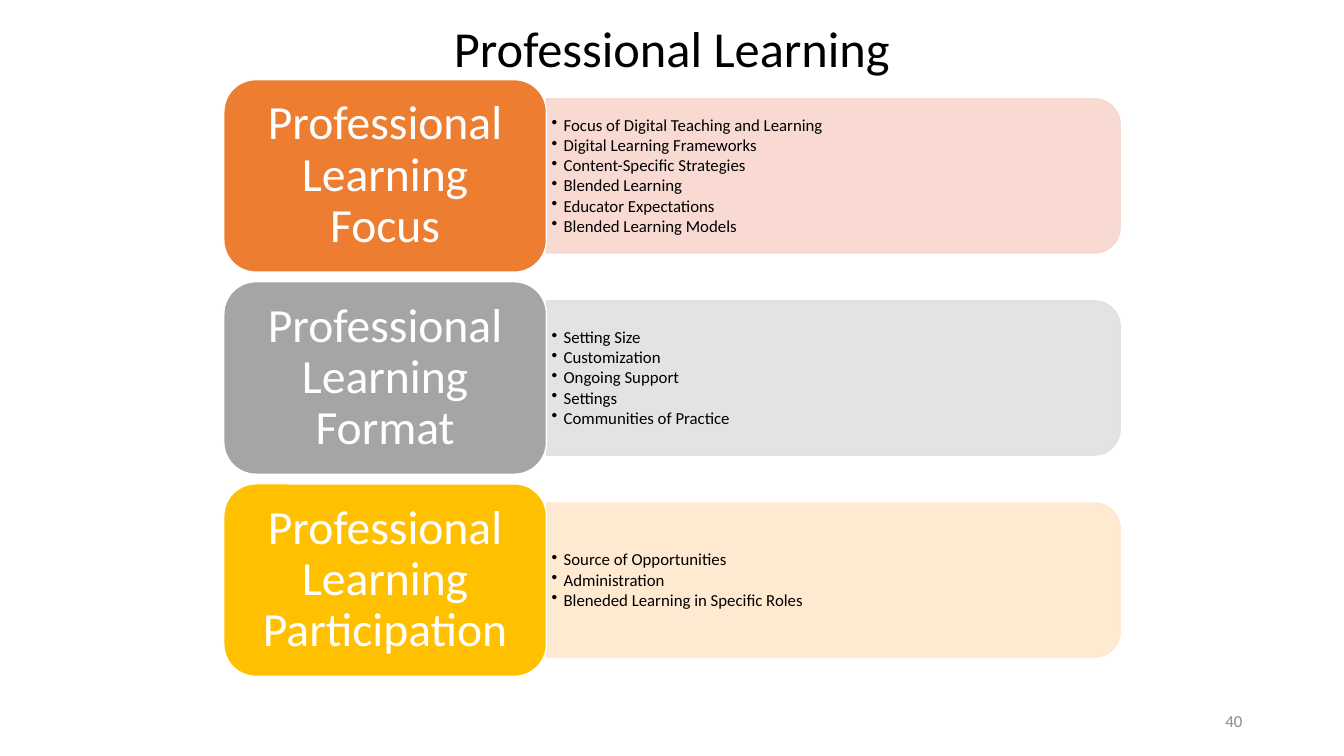
from lxml.etree import SubElement
from pptx import Presentation
from pptx.dml.color import RGBColor
from pptx.enum.shapes import MSO_SHAPE
from pptx.enum.text import MSO_ANCHOR, PP_ALIGN
from pptx.oxml.ns import qn
from pptx.util import Emu, Pt

PX = 9144
FONT = "Calibri"
COLORS = {
    "black": "000000", "white": "FFFFFF", "number": "8C8C8C",
    "orange": "ED7D31", "orange_pale": "F8D7CE",
    "gray": "A5A5A5", "gray_pale": "E1E1E1",
    "gold": "FFC000", "gold_pale": "FFE8CC",
}
TOPICS = [
    ("Professional Learning Focus", "orange",
     ["Focus of Digital Teaching and Learning", "Digital Learning Frameworks",
      "Content-Specific Strategies", "Blended Learning",
      "Educator Expectations", "Blended Learning Models"]),
    ("Professional Learning Format", "gray",
     ["Setting Size", "Customization", "Ongoing Support", "Settings",
      "Communities of Practice"]),
    ("Professional Learning Participation", "gold",
     ["Source of Opportunities", "Administration",
      "Bleneded Learning in Specific Roles"]),
]


def px(*lengths):
    """Turn lengths in px into EMU."""
    return [Emu(round(n * PX)) for n in lengths]


def rgb(name):
    """Look up a named colour."""
    return RGBColor.from_string(COLORS[name])


def set_frame(sp, anchor, inset_x, inset_y):
    """Wrap the text of a shape and set its anchor and insets."""
    tf = sp.text_frame
    tf.word_wrap = True
    tf.vertical_anchor = anchor
    tf.margin_left, tf.margin_right, tf.margin_top, tf.margin_bottom = px(
        inset_x, inset_x, inset_y, inset_y)
    return tf


def style(p, size, color, align):
    """Align a paragraph and format its runs."""
    p.alignment = align
    for r in p.runs:
        r.font.size = Pt(size)
        r.font.name = FONT
        r.font.color.rgb = rgb(color)


def add_line(s, box, text, size, color, align, anchor):
    """Add a text box with a single paragraph."""
    tf = set_frame(s.shapes.add_textbox(*px(*box)), anchor, 10, 5)
    tf.text = text
    style(tf.paragraphs[0], size, color, align)


def add_block(s, kind, box, fill, line):
    """Add a filled preset shape with a thin outline."""
    sp = s.shapes.add_shape(kind, *px(*box))
    sp.shadow.inherit = False
    sp.fill.solid()
    sp.fill.fore_color.rgb = rgb(fill)
    sp.line.color.rgb = rgb(line)
    sp.line.width = Pt(1)
    return sp


def add_panel(s, box, color):
    """Add a pale panel whose right corners are rounded."""
    x, y, w, h = box
    turned = (x + (w - h) / 2, y + (h - w) / 2, h, w)
    sp = add_block(s, MSO_SHAPE.ROUND_2_SAME_RECTANGLE, turned, color, color)
    sp.rotation = 90
    for clr in sp._element.spPr.iter(qn("a:srgbClr")):
        SubElement(clr, qn("a:alpha"), val="90000")


def add_bullets(s, box, items):
    """Add a bulleted list centred vertically in the box."""
    tf = set_frame(s.shapes.add_textbox(*px(*box)), MSO_ANCHOR.MIDDLE, 5, 3)
    tf.text = "\n".join(items)
    for p in tf.paragraphs:
        p.level = 1
        p.line_spacing = 0.9
        p.space_after = Pt(1.5)
        pPr = p._p.get_or_add_pPr()
        pPr.set("marL", str(12 * PX))
        pPr.set("indent", str(-12 * PX))
        SubElement(pPr, qn("a:buChar"), char="•")
        style(p, 12, "black", PP_ALIGN.LEFT)


def add_topic(s, box, label, color, items):
    """Add one row: a pale panel with bullets and a rounded label."""
    x, y, w, h = box
    label_w, panel_h = 320, 153
    panel_x, panel_w = x + label_w, w - label_w
    add_panel(s, (panel_x, y + (h - panel_h) / 2, panel_w, panel_h),
              color + "_pale")
    add_bullets(s, (panel_x, y + 27, panel_w - 8, h - 53), items)
    sp = add_block(s, MSO_SHAPE.ROUNDED_RECTANGLE, (x, y, label_w, h),
                   color, "white")
    tf = set_frame(sp, MSO_ANCHOR.MIDDLE, 14, 7)
    tf.text = label
    p = tf.paragraphs[0]
    p.line_spacing = 0.9
    style(p, 34, "white", PP_ALIGN.CENTER)


def add_topics(s, box, row_h):
    """Spread the topic rows evenly over the box."""
    x, y, w, h = box
    pitch = (h - row_h) / (len(TOPICS) - 1)
    for i, topic in enumerate(TOPICS):
        add_topic(s, (x, y + i * pitch, w, row_h), *topic)


def main():
    """Build the slide and save it."""
    prs = Presentation()
    prs.slide_width, prs.slide_height = px(1333, 750)
    s = prs.slides.add_slide(prs.slide_layouts[6])
    add_topics(s, (222, 79, 889, 592), 191)
    add_line(s, (296, 12, 741, 71), "Professional Learning", 36, "black",
             PP_ALIGN.CENTER, MSO_ANCHOR.TOP)
    add_line(s, (942, 695, 300, 40), "40", 12, "number",
             PP_ALIGN.RIGHT, MSO_ANCHOR.MIDDLE)
    prs.save("out.pptx")


if __name__ == "__main__":
    main()
